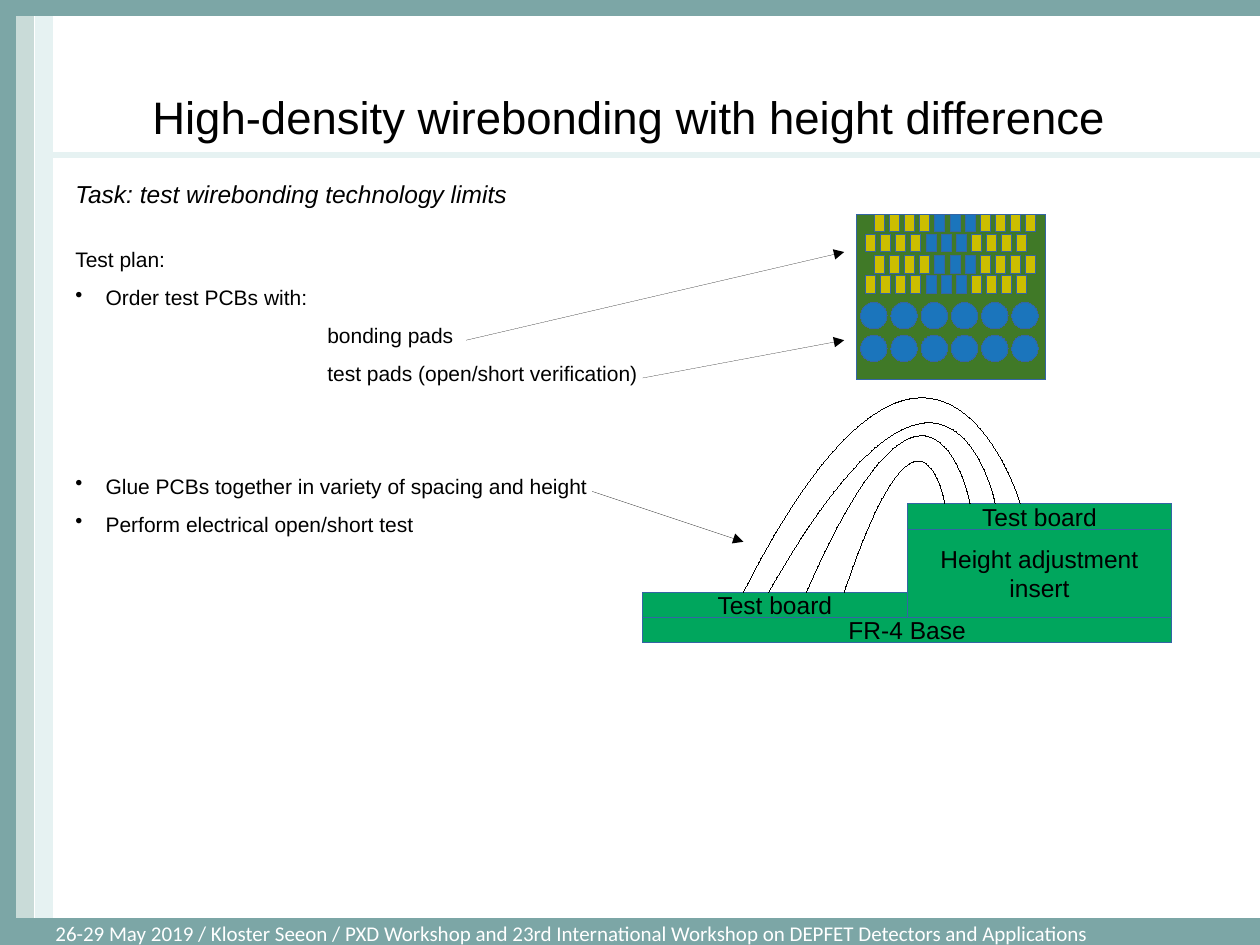
"""Build the slide on high-density wirebonding with height difference."""
import copy

import lxml.etree
import pptx
import pptx.dml.color
import pptx.enum.shapes
import pptx.enum.text
import pptx.util
from pptx.oxml.ns import qn

Inches = pptx.util.Inches
Pt = pptx.util.Pt
Align = pptx.enum.text.PP_ALIGN
Anchor = pptx.enum.text.MSO_ANCHOR
Shape = pptx.enum.shapes.MSO_SHAPE

THEME = {
    "black": "000000", "white": "FFFFFF", "teal": "7CA6A6", "mist": "C9DBD8", "pale": "E6F2F2",
    "outline": "3465A4", "board": "407927", "blue": "1B75BC", "yellow": "CCBE00", "green": "00A65D",
    "sans": "Arial", "footer font": "Calibri",
    "title": 26, "label": 14, "body": 12,
}

TITLE = "High-density wirebonding with height difference"
TASK = "Task: test wirebonding technology limits"
FOOTER = ("26-29 May 2019 / Kloster Seeon / PXD Workshop and 23rd International Workshop "
          "on DEPFET Detectors and Applications")
PLAN = [
    ("Test plan:", "plain", 0),
    ("Order test PCBs with:", "bullet", 0),
    ("bonding pads", "detail", 0),
    ("test pads (open/short verification)", "detail", 0),
    ("Glue PCBs together in variety of spacing and height", "bullet", 43),
    ("Perform electrical open/short test", "bullet", 0),
]
INDENTS = {"plain": (0, 0), "bullet": (0.24, -0.24), "detail": (2, 0)}

BANDS = [
    ((0.13, 0, 0.14, 7.29), "mist"),
    ((0.28, 0, 0.14, 7.49), "pale"),
    ((0, 0, 0.12, 7.29), "teal"),
    ((0, -0.03, 10, 0.15), "teal"),
]
FOOTER_BAND = (0, 7.29, 10, 0.23)
DIVIDER = ((0.33, 1.23), (10, 1.23))

TEST_PCB = (6.8, 1.7, 1.5, 1.31)
BOND_ROWS = [(6.94, 1.7), (6.87, 1.86), (6.94, 2.03), (6.87, 2.19)]
BOND_COLOURS = ["yellow"] * 4 + ["blue"] * 3 + ["yellow"] * 4
BOND_PITCH, BOND_SIZE = 0.12, (0.08, 0.14)
TEST_ROWS = [(6.83, 2.4), (6.83, 2.66)]
TEST_COLOURS = ["blue"] * 6
TEST_PITCH, TEST_SIZE = 0.24, (0.21, 0.21)

STACK = [
    ((5.1, 4.7, 2.1, 0.2), ["Test board"]),
    ((5.1, 4.9, 4.2, 0.2), ["FR-4 Base"]),
    ((7.2, 4.2, 2.1, 0.7), ["Height adjustment", "insert"]),
    ((7.2, 4, 2.1, 0.2), ["Test board"]),
]
WIRES = [
    ((6.7, 4.7), (7.31, 2.88), (7.5, 4)),
    ((6.4, 4.7), (7.4, 2.4), (7.7, 4)),
    ((6.1, 4.7), (7.54, 2.16), (7.9, 4)),
    ((5.9, 4.7), (7.42, 1.7), (8.1, 4)),
]
ARROWS = [
    ((3.7, 2.7), (6.7, 2)),
    ((5.1, 3), (6.7, 2.7)),
    ((4.7, 3.9), (5.9, 4.3)),
]


def colour(name):
    """Return the theme colour as an RGB value."""
    return pptx.dml.color.RGBColor.from_string(THEME[name])


def apply_format(target, values):
    """Set every attribute in a dict of format values."""
    for name, value in values.items():
        setattr(target, name, value)


def remove_style(shape):
    """Drop the preset effects, line and fill of a new shape."""
    style = shape._element.find(qn("p:style"))
    if style is not None:
        shape._element.remove(style)


def add_box(slide, kind, place, fill, line):
    """Add a filled preset shape."""
    shape = slide.shapes.add_shape(kind, *map(Inches, place))
    remove_style(shape)
    shape.fill.solid()
    shape.fill.fore_color.rgb = colour(fill)
    shape.line.color.rgb = colour(line)
    return shape


def set_frame(shape, left=0.0, top=0.0, wrap=True, anchor=Anchor.MIDDLE):
    """Set margins, wrapping and anchor, and return the text frame."""
    frame = shape.text_frame
    apply_format(frame, {
        "margin_left": Inches(left), "margin_right": Inches(0),
        "margin_top": Inches(top), "margin_bottom": Inches(top),
        "word_wrap": wrap, "vertical_anchor": anchor,
    })
    return frame


def write(paragraph, text, size, align=Align.LEFT, font="sans", ink="black", italic=False):
    """Fill a paragraph with one formatted run."""
    paragraph.alignment = align
    run = paragraph.add_run()
    run.text = text
    apply_format(run.font, {"name": THEME[font], "size": Pt(THEME[size]), "italic": italic})
    run.font.color.rgb = colour(ink)


def paragraphs(frame, count):
    """Return the given number of paragraphs of a new text frame."""
    return [frame.paragraphs[0]] + [frame.add_paragraph() for _ in range(count - 1)]


def add_line(slide, start, end, ink, width=None, arrow=False):
    """Add a straight connector, with an arrowhead at its end on request."""
    connector = slide.shapes.add_connector(
        pptx.enum.shapes.MSO_CONNECTOR.STRAIGHT, *map(Inches, start + end))
    remove_style(connector)
    connector.line.color.rgb = colour(ink)
    if width:
        connector.line.width = Pt(width)
    if arrow:
        line = connector._element.spPr.find(qn("a:ln"))
        lxml.etree.SubElement(line, qn("a:tailEnd"), type="triangle")


def add_wire(slide, start, control, end):
    """Add a bond wire as a cubic curve that lands on its end point."""
    builder = slide.shapes.build_freeform(*map(Inches, start))
    builder.add_line_segments([tuple(map(Inches, point)) for point in (control, end)], close=False)
    wire = builder.convert_to_shape()
    remove_style(wire)
    wire.fill.background()
    wire.line.color.rgb = colour("black")
    outline = wire._element.find(".//" + qn("a:path"))
    segments = outline.findall(qn("a:lnTo"))
    curve = lxml.etree.SubElement(outline, qn("a:cubicBezTo"))
    for segment in segments:
        curve.append(segment[0])
        outline.remove(segment)
    curve.append(copy.deepcopy(curve[-1]))


def add_pads(slide, kind, rows, colours, pitch, size):
    """Add rows of equally spaced pads."""
    for left, top in rows:
        for column, fill in enumerate(colours):
            add_box(slide, kind, (left + column * pitch, top) + size, fill, "outline")


def add_plan(slide):
    """Add the list of test steps."""
    box = slide.shapes.add_textbox(*map(Inches, (0.5, 1.81, 4.7, 2.98)))
    frame = set_frame(box, 0.1, 0.05, anchor=Anchor.TOP)
    for paragraph, (text, level, gap) in zip(paragraphs(frame, len(PLAN)), PLAN):
        margin, indent = map(Inches, INDENTS[level])
        properties = paragraph._p.get_or_add_pPr()
        properties.set("marL", str(margin))
        properties.set("indent", str(indent))
        if level == "bullet":
            lxml.etree.SubElement(properties, qn("a:buChar"), char="•")
        paragraph.line_spacing = 1.5
        if gap:
            paragraph.space_before = Pt(gap)
        write(paragraph, text, "body")


def main():
    """Build and save the presentation."""
    presentation = pptx.Presentation()
    apply_format(presentation, {"slide_width": Inches(10), "slide_height": Inches(7.5)})
    slide = presentation.slides.add_slide(presentation.slide_layouts[6])

    for place, fill in BANDS:
        add_box(slide, Shape.RECTANGLE, place, fill, fill)
    add_line(slide, *DIVIDER, "pale", width=3)
    footer = set_frame(add_box(slide, Shape.RECTANGLE, FOOTER_BAND, "teal", "teal"), left=0.44)
    write(footer.paragraphs[0], FOOTER, "body", font="footer font", ink="white")

    add_box(slide, Shape.RECTANGLE, TEST_PCB, "board", "outline")
    add_pads(slide, Shape.RECTANGLE, BOND_ROWS, BOND_COLOURS, BOND_PITCH, BOND_SIZE)
    add_pads(slide, Shape.OVAL, TEST_ROWS, TEST_COLOURS, TEST_PITCH, TEST_SIZE)

    title = set_frame(slide.shapes.add_textbox(*map(Inches, (0.5, 0.3, 8.99, 1.24))))
    write(title.paragraphs[0], TITLE, "title", Align.CENTER)
    for place, lines in STACK:
        board = add_box(slide, Shape.RECTANGLE, place, "green", "outline")
        frame = set_frame(board, wrap=False)
        for paragraph, text in zip(paragraphs(frame, len(lines)), lines):
            write(paragraph, text, "label", Align.CENTER)
    task = slide.shapes.add_textbox(*map(Inches, (0.5, 1.37, 4.2, 0.33)))
    task_frame = set_frame(task, 0.1, 0.05, anchor=Anchor.TOP)
    write(task_frame.paragraphs[0], TASK, "label", italic=True)
    add_plan(slide)

    for wire in WIRES:
        add_wire(slide, *wire)
    for start, end in ARROWS:
        add_line(slide, start, end, "black", arrow=True)
    presentation.save("out.pptx")


if __name__ == "__main__":
    main()
